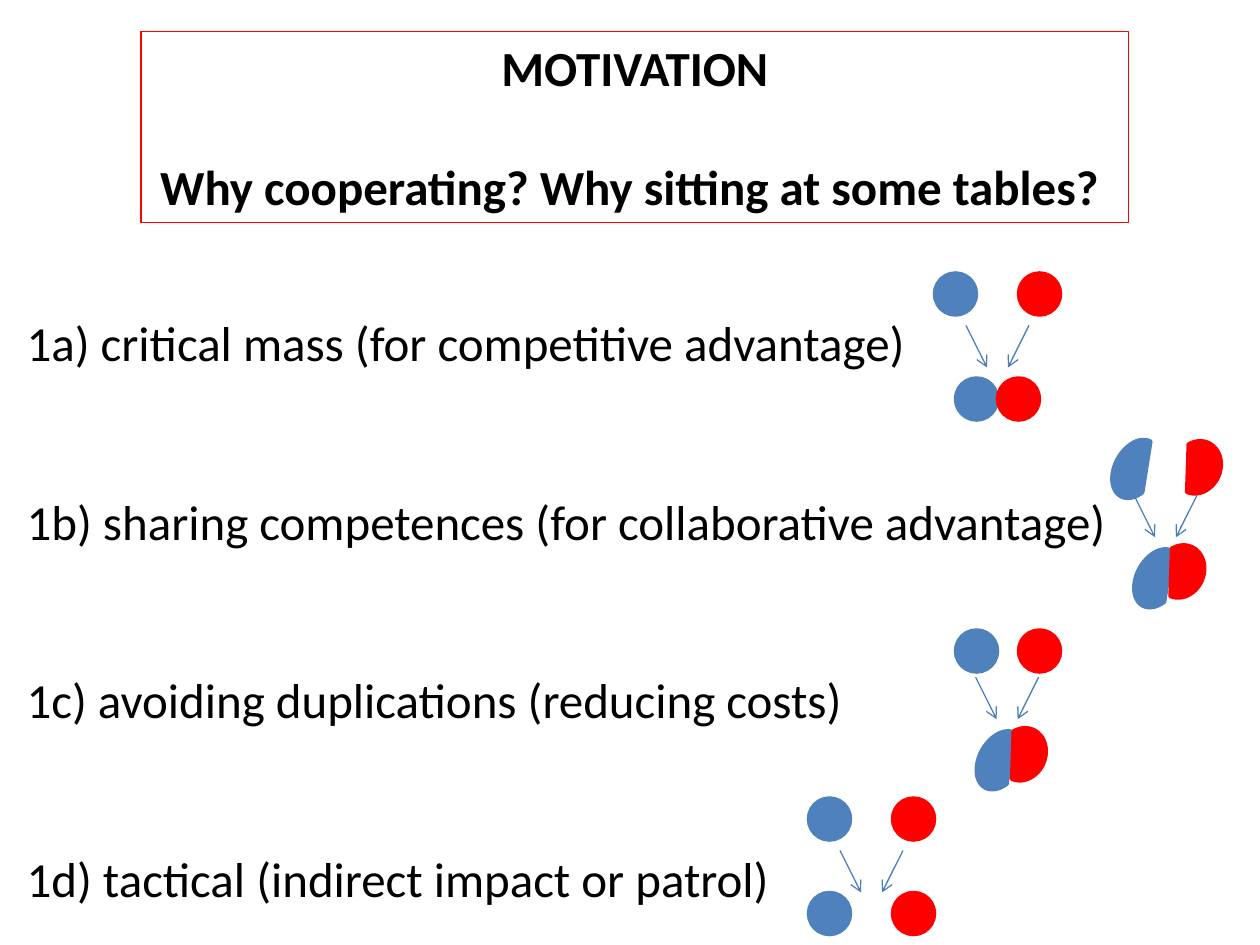
from dataclasses import dataclass

import pptx
import pptx.dml.color
import pptx.enum.shapes
import pptx.enum.text
import pptx.oxml
import pptx.oxml.ns
import pptx.util

Pt = pptx.util.Pt
RGB = pptx.dml.color.RGBColor.from_string
SHAPE = pptx.enum.shapes.MSO_SHAPE
ALIGN = pptx.enum.text.PP_ALIGN
Point = tuple[float, float]


@dataclass(frozen=True)
class Theme:
    font: str = "Calibri"
    size: float = 28
    line_height: float = 34.2
    text: str = "000000"
    blue: str = "4F81BD"
    red: str = "FF0000"
    arrow: str = "4B7EBC"


@dataclass(frozen=True)
class Form:
    """Outline of one partner: preset, size and rotation."""
    preset: int
    width: float
    height: float
    rotation: float = 0


@dataclass(frozen=True)
class Pair:
    """A blue and a red partner with their top left corners."""
    forms: tuple[Form, Form]
    blue: Point
    red: Point


@dataclass(frozen=True)
class Motive:
    text: str
    before: Pair
    arrows: Point
    after: Pair


THEME = Theme()
CIRCLES = (Form(SHAPE.OVAL, 24, 24),) * 2
HALVES = (Form(SHAPE.CHORD, 24, 36, 28.7), Form(SHAPE.CHORD, 26.5, 31, 203.4))

TITLE = ["MOTIVATION", "Why cooperating? Why sitting at some tables? "]
MOTIVES = [
    Motive("1a) critical mass (for competitive advantage)",
           Pair(CIRCLES, (534, 156), (582, 156)), (552, 186),
           Pair(CIRCLES, (546, 216), (570, 216))),
    Motive("1b) sharing competences (for collaborative advantage)",
           Pair(HALVES, (637, 250), (671, 251.5)), (648, 283),
           Pair(HALVES, (649.5, 312.5), (661.5, 311))),
    Motive("1c) avoiding duplications (reducing costs)",
           Pair(CIRCLES, (546, 360), (582, 360)), (557.5, 387),
           Pair(HALVES, (559.5, 416.5), (571, 415.5))),
    Motive("1d) tactical (indirect impact or patrol)",
           Pair(CIRCLES, (462, 456), (510, 456)), (480, 486),
           Pair(CIRCLES, (462, 510), (510, 510))),
]


def place(sp, left: float, top: float, width: float, height: float) -> None:
    sp.left, sp.top, sp.width, sp.height = map(Pt, (left, top, width, height))


def write(sp, lines: list[str], *, gap: float, bold: bool = False,
          align=ALIGN.LEFT, wrap: bool = True) -> None:
    """Fill a placeholder with unbulleted paragraphs, gap points apart."""
    tf = sp.text_frame
    tf.word_wrap = wrap
    tf.auto_size = pptx.enum.text.MSO_AUTO_SIZE.NONE
    tf.vertical_anchor = pptx.enum.text.MSO_ANCHOR.TOP
    for i, line in enumerate(lines):
        p = tf.add_paragraph() if i else tf.paragraphs[0]
        p.alignment = align
        p.space_before = Pt(gap if i else 0)
        pPr = p._p.get_or_add_pPr()
        pPr.set("marL", "0")
        pPr.set("indent", "0")
        pPr.append(pptx.oxml.parse_xml(
            f"<a:buNone {pptx.oxml.ns.nsdecls('a')}/>"))
        r = p.add_run()
        r.text = line
        r.font.name = THEME.font
        r.font.size = Pt(THEME.size)
        r.font.bold = bold
        r.font.color.rgb = RGB(THEME.text)


def draw_pair(slide, pair: Pair) -> None:
    for form, (x, y), color in zip(pair.forms, (pair.blue, pair.red),
                                   (THEME.blue, THEME.red)):
        sp = slide.shapes.add_shape(form.preset, Pt(x), Pt(y),
                                    Pt(form.width), Pt(form.height))
        sp.rotation = form.rotation
        sp.shadow.inherit = False
        sp.fill.solid()
        sp.fill.fore_color.rgb = RGB(color)
        sp.line.color.rgb = RGB(color)
        sp.line.width = Pt(2)


def draw_arrow(slide, start: Point, end: Point) -> None:
    line = slide.shapes.add_connector(
        pptx.enum.shapes.MSO_CONNECTOR.STRAIGHT, *map(Pt, start + end))
    line.line.color.rgb = RGB(THEME.arrow)
    line.line.width = Pt(0.75)
    ns = pptx.oxml.ns.nsdecls("a")
    line.line._get_or_add_ln().append(
        pptx.oxml.parse_xml(f'<a:tailEnd {ns} type="arrow"/>'))
    line._element.spPr.append(pptx.oxml.parse_xml(f"<a:effectLst {ns}/>"))


def draw_arrows(slide, x: float, y: float) -> None:
    """Two arrows that converge downwards from x and x + 36."""
    draw_arrow(slide, (x, y), (x + 12, y + 24))
    draw_arrow(slide, (x + 36, y), (x + 24, y + 24))


def main() -> None:
    prs = pptx.Presentation()
    prs.slide_width, prs.slide_height = Pt(720), Pt(540)
    slide = prs.slides.add_slide(prs.slide_layouts[1])

    title, body = slide.placeholders
    place(title, 80.5, 18, 564.5, 109)
    title.line.color.rgb = RGB(THEME.red)
    title.line.width = Pt(0.75)
    write(title, TITLE, gap=THEME.line_height, bold=True,
          align=ALIGN.CENTER, wrap=False)

    place(body, 8, 175, 702, 346.5)
    write(body, [m.text for m in MOTIVES], gap=2 * THEME.line_height)

    for motive in MOTIVES:
        draw_pair(slide, motive.before)
        draw_arrows(slide, *motive.arrows)
        draw_pair(slide, motive.after)

    prs.save("out.pptx")


if __name__ == "__main__":
    main()
